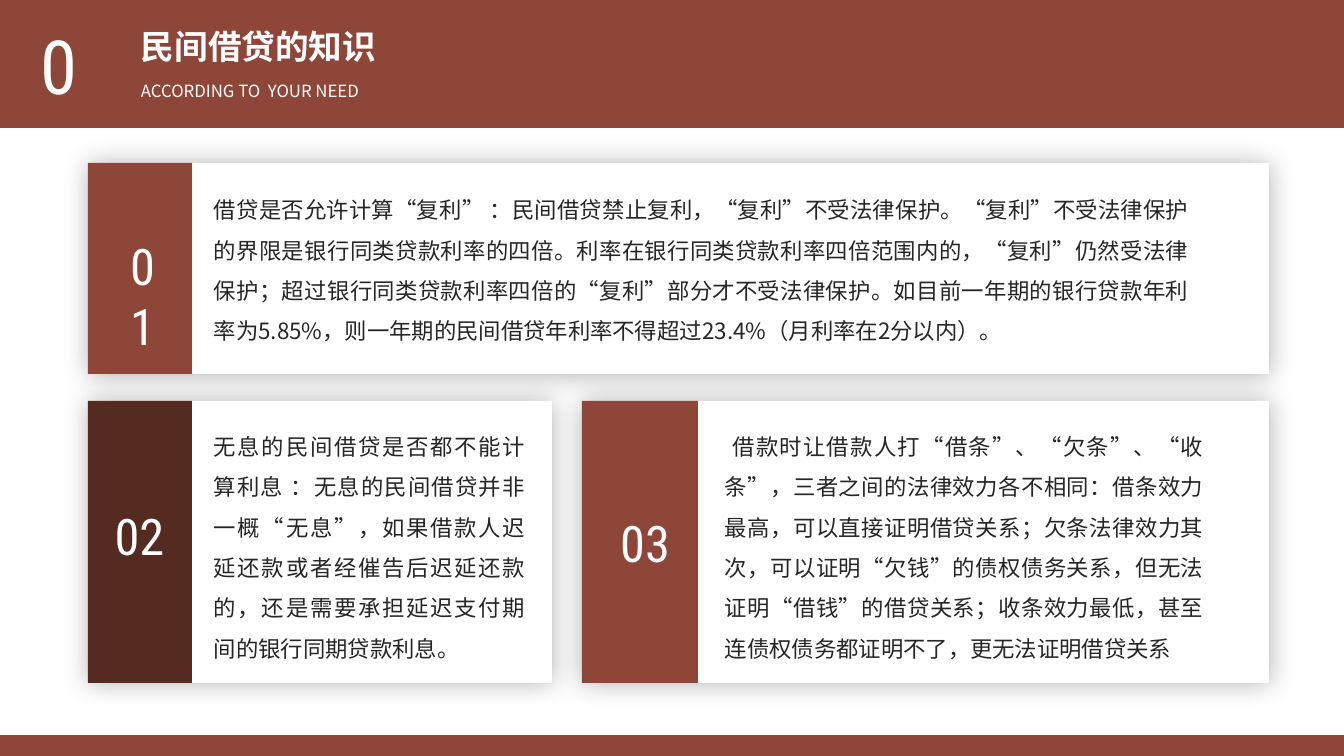
"""Build a slide of three cards about private lending."""
import lxml.etree
import pptx
import pptx.dml.color
import pptx.enum.shapes
import pptx.enum.text
import pptx.oxml.ns
import pptx.util

PX = 914400 / 100.8
CJK = "Noto Sans CJK SC"
DIGITS = "Roboto Condensed"
RUST, BROWN, WHITE, INK = "8E4638", "542A21", "FFFFFF", "262626"
ALIGN = pptx.enum.text.PP_ALIGN
qn = pptx.oxml.ns.qn

presentation = pptx.Presentation()
presentation.slide_width = pptx.util.Inches(13.333)
presentation.slide_height = pptx.util.Inches(7.5)
slide = presentation.slides.add_slide(presentation.slide_layouts[6])


def add_box(box, color):
    shape = slide.shapes.add_shape(
        pptx.enum.shapes.MSO_SHAPE.RECTANGLE, *[round(n * PX) for n in box])
    shape.shadow.inherit = False
    shape.fill.solid()
    shape.fill.fore_color.rgb = pptx.dml.color.RGBColor.from_string(color)
    shape.line.fill.background()
    return shape


def add_text(box, text, size, font_name, color=WHITE, bold=False, align=ALIGN.LEFT, spacing=1.0):
    shape = slide.shapes.add_textbox(*[round(n * PX) for n in box])
    shape.text_frame.word_wrap = True
    paragraph = shape.text_frame.paragraphs[0]
    paragraph.text = text
    paragraph.alignment = align
    paragraph.line_spacing = spacing
    run = paragraph.runs[0]
    run.font.size = pptx.util.Pt(size)
    run.font.bold = bold
    run.font.name = font_name
    run.font.color.rgb = pptx.dml.color.RGBColor.from_string(color)
    east_asian = lxml.etree.SubElement(run.font._element, qn("a:ea"))
    east_asian.set("typeface", font_name)


add_box((-2, 0, 1346, 128), RUST)
add_box((0, 735, 1344, 21), RUST)
add_text((131, 21, 377, 50), "民间借贷的知识", 24, CJK, bold=True)
add_text((31, 15, 90, 101), "01", 53.4, DIGITS)
add_text((131, 72, 256, 34), "ACCORDING TO  YOUR NEED", 12, CJK, spacing=1.2)

cards = [
    ("01", RUST, (88, 163, 1181, 211), 104, (109, 230, 67, 72), (204, 178, 996, 173),
     "借贷是否允许计算“复利” ：民间借贷禁止复利，“复利”不受法律保护。"
     "“复利”不受法律保护的界限是银行同类贷款利率的四倍。"
     "利率在银行同类贷款利率四倍范围内的，“复利”仍然受法律保护；"
     "超过银行同类贷款利率四倍的“复利”部分才不受法律保护。"
     "如目前一年期的银行贷款年利率为5.85%，"
     "则一年期的民间借贷年利率不得超过23.4%（月利率在2分以内）。"),
    ("02", BROWN, (88, 401, 464, 282), 104, (103, 500, 73, 72), (204, 415, 331, 254),
     "无息的民间借贷是否都不能计算利息 ：无息的民间借贷并非一概“无息”，"
     "如果借款人迟延还款或者经催告后迟延还款的，"
     "还是需要承担延迟支付期间的银行同期贷款利息。"),
    ("03", RUST, (582, 401, 687, 282), 116, (608, 507, 74, 72), (715, 415, 499, 254),
     " 借款时让借款人打“借条”、“欠条”、“收条”，三者之间的法律效力各不相同："
     "借条效力最高，可以直接证明借贷关系；"
     "欠条法律效力其次，可以证明“欠钱”的债权债务关系，但无法证明“借钱”的借贷关系；"
     "收条效力最低，甚至连债权债务都证明不了，更无法证明借贷关系"),
]

for number, color, card_box, bar_width, number_box, body_box, body in cards:
    card = add_box(card_box, WHITE)
    effects = card._element.spPr.find(qn("a:effectLst"))
    shadow = lxml.etree.SubElement(effects, qn("a:outerShdw"), blurRad=str(pptx.util.Pt(19)),
                                   dist="0", dir="0", algn="ctr", rotWithShape="0")
    shade = lxml.etree.SubElement(shadow, qn("a:srgbClr"), val="000000")
    lxml.etree.SubElement(shade, qn("a:alpha"), val="29000")
    left, top, width, height = card_box
    add_text(body_box, body, 16, CJK, INK, align=ALIGN.JUSTIFY, spacing=1.5)
    add_box((left, top, bar_width, height), color)
    add_text(number_box, number, 36, DIGITS, align=ALIGN.CENTER)

presentation.save("out.pptx")
